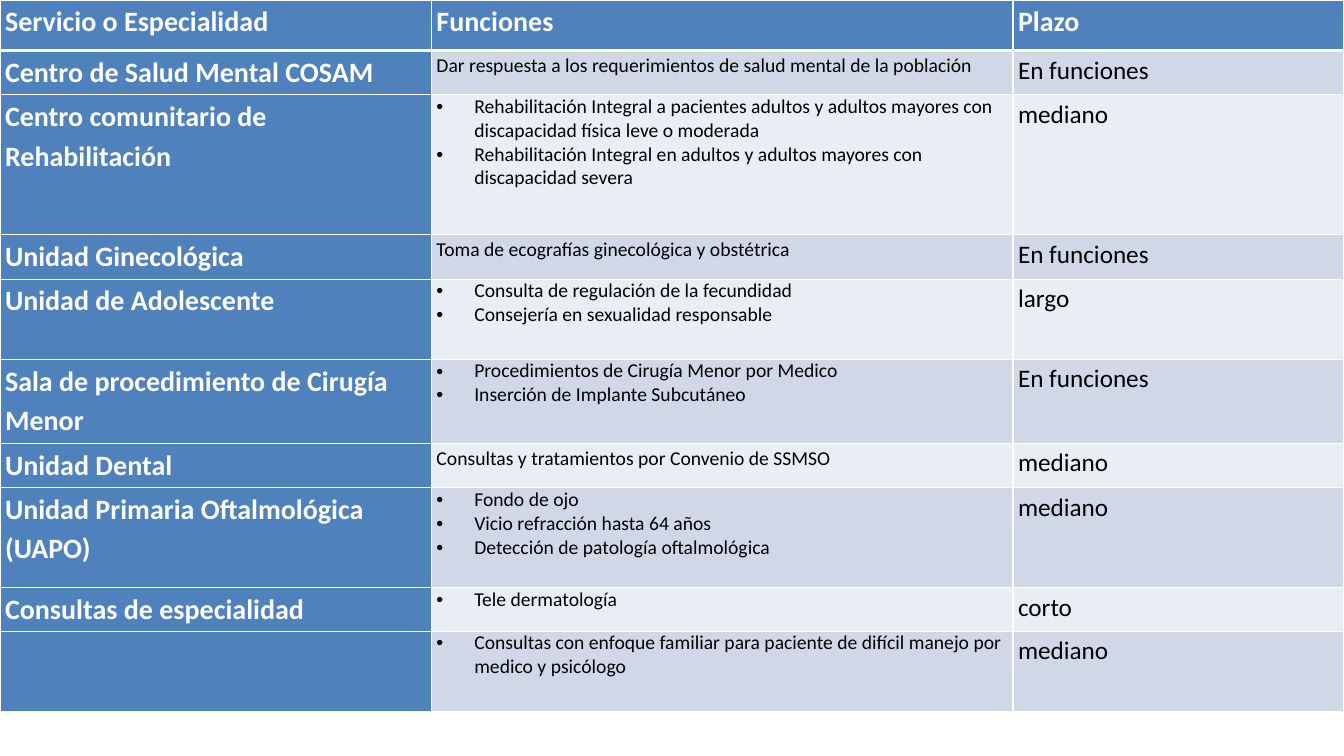
"""Build a slide with a table of health services, their functions and terms."""
import pptx
import pptx.dml.color
import pptx.oxml
import pptx.oxml.ns
import pptx.util
from lxml import etree

Pt = pptx.util.Pt
COLORS = {"blue": "4F81BD", "dark": "D0D8E8", "light": "E9EDF4",
          "white": "FFFFFF", "black": "000000"}
WIDTHS = [308.2, 415.4, 236.4]
HEIGHTS = [36, 31.7, 100, 31.7, 57.3, 60, 31.7, 71.5, 31, 57.5]
HEADS = ["Servicio o Especialidad", "Funciones", "Plazo"]
ROWS = [
    ("Centro de Salud Mental COSAM",
     "Dar respuesta a los requerimientos de salud mental de la población",
     "En funciones"),
    ("Centro comunitario de Rehabilitación",
     ["Rehabilitación Integral a pacientes adultos y adultos mayores con "
      "discapacidad física leve o moderada",
      "Rehabilitación Integral en adultos y adultos mayores con "
      "discapacidad severa"],
     "mediano"),
    ("Unidad Ginecológica", "Toma de ecografías ginecológica y obstétrica",
     "En funciones"),
    ("Unidad de Adolescente",
     ["Consulta de regulación de la fecundidad",
      "Consejería en sexualidad responsable"],
     "largo"),
    ("Sala de procedimiento de Cirugía Menor",
     ["Procedimientos de Cirugía Menor por Medico",
      "Inserción de Implante Subcutáneo"],
     "En funciones"),
    ("Unidad Dental", "Consultas y tratamientos por Convenio de SSMSO",
     "mediano"),
    ("Unidad Primaria Oftalmológica (UAPO)",
     ["Fondo de ojo", "Vicio refracción hasta 64 años",
      "Detección de patología oftalmológica"],
     "mediano"),
    ("Consultas de especialidad", ["Tele dermatología"], "corto"),
    ("",
     ["Consultas con enfoque familiar para paciente de difícil manejo por "
      "medico y psicólogo"],
     "mediano"),
]


def color(name):
    """Return the named colour."""
    return pptx.dml.color.RGBColor.from_string(COLORS[name])


def bullet(para):
    """Give a paragraph a bullet and a hanging indent."""
    props = para._p.get_or_add_pPr()
    props.set("marL", str(Pt(27)))
    props.set("indent", str(Pt(-27)))
    font = etree.SubElement(props, pptx.oxml.ns.qn("a:buFont"))
    font.set("typeface", "Arial")
    mark = etree.SubElement(props, pptx.oxml.ns.qn("a:buChar"))
    mark.set("char", "•")


def write(frame, text, size=14, ink="black", bold=False):
    """Write a string as one paragraph, or a list as bullets."""
    listed = isinstance(text, list)
    for index, line in enumerate(text if listed else [text]):
        para = frame.add_paragraph() if index else frame.paragraphs[0]
        if listed:
            bullet(para)
        else:
            para.line_spacing = 1.15
        para.font.size = Pt(size)
        if line:
            run = para.add_run()
            run.text = line
            run.font.name = "Calibri"
            run.font.size = Pt(size)
            run.font.bold = bold
            run.font.color.rgb = color(ink)


def border(cell, top, bottom):
    """Draw white lines on the four sides of a cell."""
    props = cell._tc.get_or_add_tcPr()
    for side, width in (("L", 1), ("R", 1), ("T", top), ("B", bottom)):
        line = etree.SubElement(props, pptx.oxml.ns.qn(f"a:ln{side}"))
        line.set("w", str(Pt(width)))
        fill = etree.SubElement(line, pptx.oxml.ns.qn("a:solidFill"))
        tint = etree.SubElement(fill, pptx.oxml.ns.qn("a:srgbClr"))
        tint.set("val", COLORS["white"])


def style(cell, fill, top=1, bottom=1):
    """Set the margins, borders and fill of a cell."""
    cell.margin_left = cell.margin_right = Pt(3.6)
    cell.margin_top = cell.margin_bottom = Pt(0)
    border(cell, top, bottom)
    cell.fill.solid()
    cell.fill.fore_color.rgb = color(fill)


def add_grid(slide):
    """Add the table and fill its cells."""
    grid = slide.shapes.add_table(
        len(HEIGHTS), len(WIDTHS), Pt(0), Pt(0),
        Pt(sum(WIDTHS)), Pt(sum(HEIGHTS))).table
    for column, width in zip(grid.columns, WIDTHS):
        column.width = Pt(width)
    for row, height in zip(grid.rows, HEIGHTS):
        row.height = Pt(height)
    for r, texts in enumerate([HEADS] + ROWS):
        for c, text in enumerate(texts):
            cell = grid.cell(r, c)
            strong = r == 0 or c == 0
            band = "dark" if r % 2 else "light"
            style(cell, "blue" if strong else band,
                  top=3 if r == 1 else 1, bottom=3 if r == 0 else 1)
            write(cell.text_frame, text,
                  size=20 if strong else (14, 18)[c - 1],
                  ink="white" if strong else "black", bold=strong)


def main():
    """Build and save the slide."""
    deck = pptx.Presentation()
    deck.slide_width, deck.slide_height = Pt(960), Pt(540)
    slide = deck.slides.add_slide(deck.slide_layouts[6])
    add_grid(slide)
    deck.save("out.pptx")


if __name__ == "__main__":
    main()
